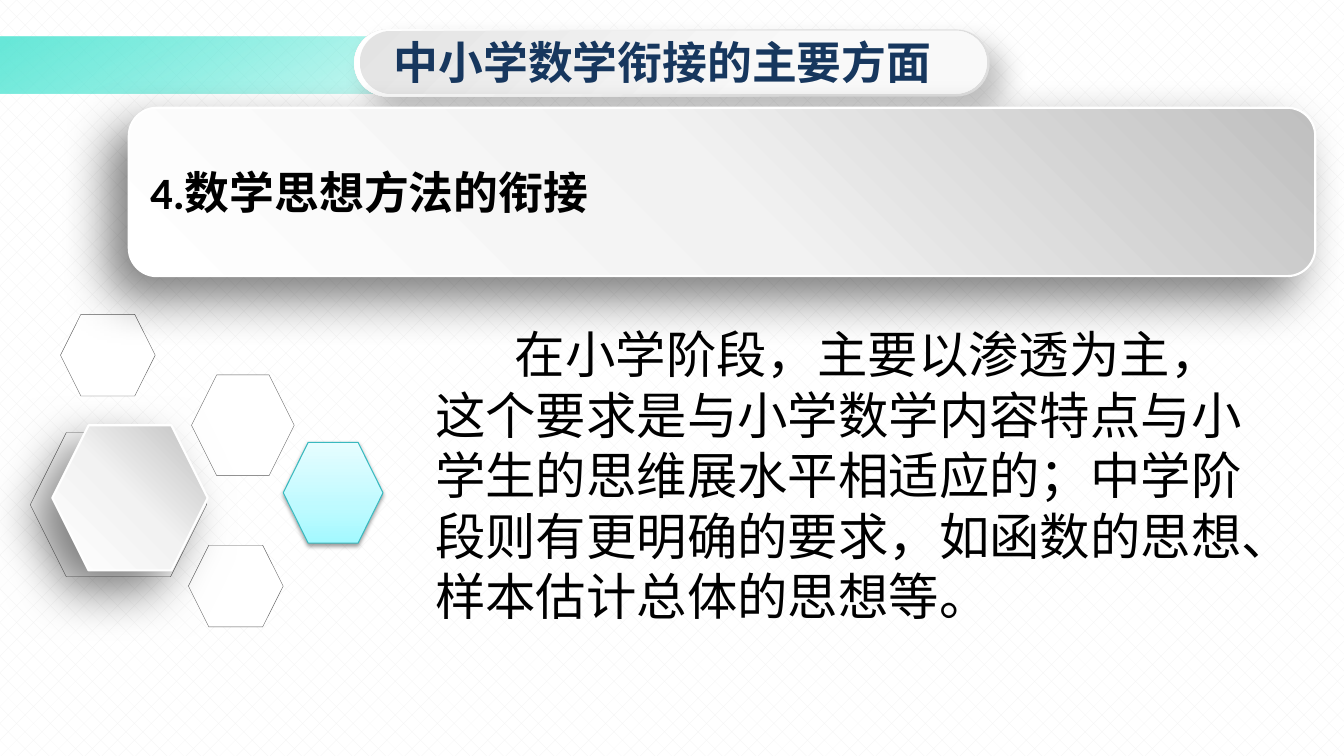
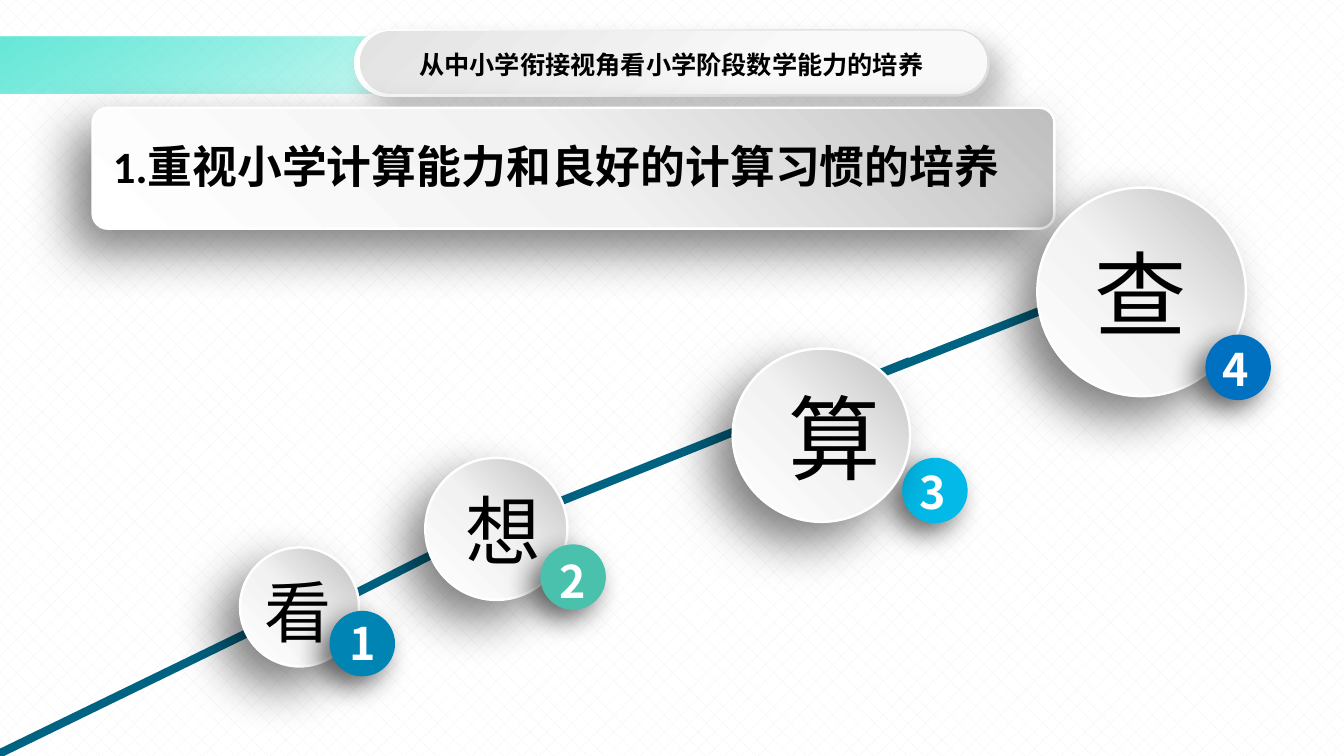
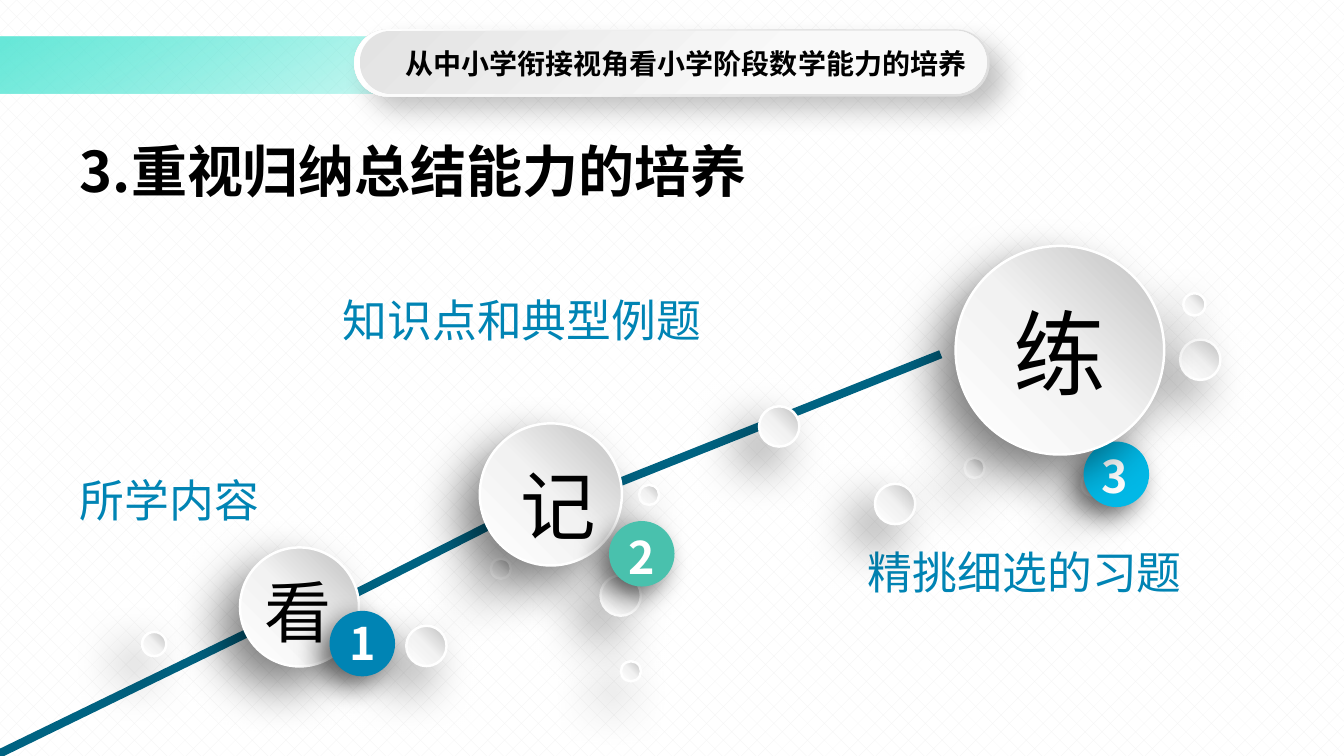
import pptx
import pptx.dml.color
import pptx.enum.dml
import pptx.enum.shapes
import pptx.enum.text
import pptx.oxml.ns
import pptx.util
from lxml import etree

Pt = pptx.util.Pt
RGB = pptx.dml.color.RGBColor
SHAPE = pptx.enum.shapes.MSO_SHAPE
ALIGN = pptx.enum.text.PP_ALIGN
ANCHOR = pptx.enum.text.MSO_ANCHOR
qn = pptx.oxml.ns.qn

WHITE = RGB(0xFF, 0xFF, 0xFF)
BLACK = RGB(0, 0, 0)
PALE = RGB(0xF2, 0xF2, 0xF2)
SILVER = RGB(0xBF, 0xBF, 0xBF)
GREY = RGB(0x59, 0x59, 0x59)
NAVY = RGB(0x17, 0x37, 0x5E)
PETROL = RGB(0x00, 0x63, 0x82)
BLUE = RGB(0x00, 0x84, 0xB4)
GREEN = RGB(0x49, 0xC1, 0xAD)
SKY = RGB(0x02, 0xB9, 0xE7)
ROYAL = RGB(0x00, 0x70, 0xC0)
TEAL_EDGE = RGB(0x39, 0xB9, 0xBF)

LATIN = "Calibri"
CJK = "Noto Sans CJK SC"

# Gradients: clockwise angle, then (position, colour[, opacity]) stops
METAL = (315, [(0, WHITE), (50, PALE), (100, SILVER)])
BAND = (60, [(1, RGB(0x4E, 0xE4, 0xD2), 85), (50, RGB(0x20, 0xE2, 0xCB), 0)])
PILL_RIM = (225, [(1, RGB(0xDE, 0xDE, 0xDE)), (30, RGB(0xE0, 0xE0, 0xE0)),
                  (61, RGB(0xF6, 0xF6, 0xF6)), (100, WHITE)])
PILL_FACE = (45, [(0, RGB(0xE3, 0xE3, 0xE3)), (67, RGB(0xF9, 0xF9, 0xF9))])
AQUA = (270, [(0, RGB(0xA3, 0xF9, 0xFF)), (35, RGB(0xBE, 0xFA, 0xFF)),
              (100, RGB(0xE6, 0xFD, 0xFF))])

# Shadows: opacity, blur, distance, direction
DEEP = (50, 35, 20, 135)
BADGE_SHADOW = (60, 20, 10, 135)
PILL_SHADOW = (24, 19, 14, 45)
AQUA_SHADOW = (38, 3.1, 1.6, 90)


def add_xml(parent, tag, **attributes):
    child = etree.SubElement(parent, qn("a:" + tag))
    for name, value in attributes.items():
        child.set(name, str(value))
    return child


def write(shape, text, size, color=BLACK, font=LATIN, bold=False, align=ALIGN.LEFT,
          anchor=ANCHOR.TOP, insets=(7.2, 3.6), indent=0, spacing=1.0):
    frame = shape.text_frame
    frame.auto_size = pptx.enum.text.MSO_AUTO_SIZE.NONE
    frame.word_wrap = True
    frame.vertical_anchor = anchor
    frame.margin_left = frame.margin_right = Pt(insets[0])
    frame.margin_top = frame.margin_bottom = Pt(insets[1])
    paragraph = frame.paragraphs[0]
    paragraph.alignment = align
    paragraph.line_spacing = spacing
    if indent:
        paragraph._p.get_or_add_pPr().set("indent", str(int(Pt(indent))))
    run = paragraph.add_run()
    run.text = text
    run.font.size = Pt(size)
    run.font.bold = bold
    run.font.color.rgb = color
    run.font.name = font
    add_xml(run._r.get_or_add_rPr(), "ea", typeface=CJK)


class Deck:
    def __init__(self):
        self.prs = pptx.Presentation()
        self.prs.slide_width, self.prs.slide_height = Pt(960), Pt(540)
        backdrop = self.prs.slide_master.background.fill
        backdrop.patterned()
        backdrop.pattern = pptx.enum.dml.MSO_PATTERN.DOTTED_DIAMOND
        backdrop.fore_color.rgb = PALE
        backdrop.back_color.rgb = WHITE
        self.slide = None

    def start(self, text, size, box, **style):
        """New slide with the turquoise band and the title pill."""
        self.slide = self.prs.slides.add_slide(self.prs.slide_layouts[5])
        self.shape(SHAPE.RECTANGLE, (-1, 26, 948, 41), BAND)
        self.shape(SHAPE.ROUNDED_RECTANGLE, (253, 21, 454, 48), PILL_RIM,
                   shadow=PILL_SHADOW, corner=0.5)
        self.shape(SHAPE.ROUNDED_RECTANGLE, (257, 22, 448, 45), PILL_FACE, corner=0.5)
        title = self.slide.shapes.title
        title.left, title.top, title.width, title.height = map(Pt, box)
        write(title, text, size, bold=True, **style)
        title._element.getparent().append(title._element)  # above the pill

    def shape(self, kind, box, fill, line=None, shadow=None, corner=None):
        shape = self.slide.shapes.add_shape(kind, *map(Pt, box))
        if corner is not None:
            shape.adjustments[0] = corner
        if isinstance(fill, RGB):
            shape.fill.solid()
            shape.fill.fore_color.rgb = fill
        else:
            self.gradient(shape, *fill)
        if line:
            shape.line.color.rgb, shape.line.width = line[0], Pt(line[1])
        else:
            shape.line.fill.background()
        shape.shadow.inherit = False
        if shadow:
            opacity, blur, distance, direction = shadow
            effects = shape._element.spPr.find(qn("a:effectLst"))
            outer = add_xml(effects, "outerShdw", blurRad=int(Pt(blur)), dist=int(Pt(distance)),
                            dir=direction * 60000, algn="ctr", rotWithShape=0)
            black = add_xml(outer, "srgbClr", val=BLACK)
            add_xml(black, "alpha", val=opacity * 1000)
        return shape

    def gradient(self, shape, angle, stops):
        shape.fill.gradient()
        grad = shape._element.spPr.find(qn("a:gradFill"))
        for child in list(grad):
            grad.remove(child)
        stop_list = add_xml(grad, "gsLst")
        for position, color, *opacity in stops:
            stop = add_xml(stop_list, "gs", pos=position * 1000)
            tint = add_xml(stop, "srgbClr", val=color)
            if opacity:
                add_xml(tint, "alpha", val=opacity[0] * 1000)
        add_xml(grad, "lin", ang=angle * 60000, scaled=0)

    def metal(self, kind, box, width=1.75, corner=None):
        return self.shape(kind, box, METAL, (WHITE, width), DEEP, corner)

    def text(self, box, text, size, **style):
        write(self.slide.shapes.add_textbox(*map(Pt, box)), text, size, **style)

    def path_line(self, x1, y1, x2, y2):
        line = self.slide.shapes.add_connector(
            pptx.enum.shapes.MSO_CONNECTOR.STRAIGHT, *map(Pt, (x1, y1, x2, y2)))
        line.line.color.rgb, line.line.width = PETROL, Pt(6)
        add_xml(line._element.spPr, "effectLst")

    def disc(self, box, word, size, dx, dy):
        self.metal(SHAPE.OVAL, box)
        self.text((box[0] + dx, box[1] + dy, size + 14.4, size * 1.35), word, size, font=CJK)

    def badge(self, x, y, number, color, dx=0, dy=5):
        side = 46.8
        self.shape(SHAPE.OVAL, (x, y, side, side), color, shadow=BADGE_SHADOW)
        self.text((x + dx, y + dy, side, 39), number, 32, color=WHITE, font=CJK,
                  bold=True, align=ALIGN.CENTER, insets=(0, 0))

    def first_step(self):
        """Opening of the rising path, shared by both path slides."""
        self.disc((171.4, 391, 85, 85), "看", 48, 10.5, 13)
        self.badge(235.4, 436.3, "1", BLUE, dy=3.6)


PATH_START = [(216, 443, 378, 361), (-4, 540, 212, 435)]
ABILITY_TITLE = "从中小学衔接视角看小学阶段数学能力的培养"


def methods_slide(deck):
    deck.start("中小学数学衔接的主要方面", 32, (274, 21, 411, 46), color=NAVY, font=CJK)
    # Hexagon cluster
    outline = (GREY, 0.25)
    for box in [(136.8, 267.8, 73.4, 72), (21.6, 309, 126, 103),
                (43.2, 224.6, 67.7, 58.3), (134.6, 389.5, 67.7, 58.3)]:
        deck.shape(SHAPE.HEXAGON, box, WHITE, outline)
    deck.metal(SHAPE.HEXAGON, (37.4, 303.8, 111, 103.7), 1.5)
    deck.shape(SHAPE.HEXAGON, (202.3, 316, 71.3, 72), AQUA, (TEAL_EDGE, 0.75), AQUA_SHADOW)
    # Heading card and body
    heading = deck.metal(SHAPE.ROUNDED_RECTANGLE, (92, 77, 847.5, 120.3), 1.5)
    write(heading, "4.数学思想方法的衔接", 32, bold=True, anchor=ANCHOR.MIDDLE, insets=(9.4, 5))
    deck.text((303.8, 227.5, 595.4, 225.4),
              "在小学阶段，主要以渗透为主，这个要求是与小学数学内容特点与小学生的思维展水平相适应的；"
              "中学阶段则有更明确的要求，如函数的思想、样本估计总体的思想等。", 36, indent=57)


def calculation_slide(deck):
    deck.start(ABILITY_TITLE, 18, (274, 31.7, 411, 29), align=ALIGN.CENTER)
    # Heading card
    deck.metal(SHAPE.ROUNDED_RECTANGLE, (66.2, 77, 687, 86.4), corner=0.125)
    deck.text((71.3, 94.3, 678.2, 48.2), "1.重视小学计算能力和良好的计算习惯的培养", 32,
              bold=True, insets=(9.4, 5))
    # Rising path with four steps
    for ends in PATH_START + [(393, 361, 650, 258), (616, 272, 873, 171)]:
        deck.path_line(*ends)
    deck.first_step()
    deck.disc((303.8, 327, 101.5, 101.5), "想", 54, 21.6, 15)
    deck.badge(386, 388.8, "2", GREEN, dy=6.5)
    deck.badge(644.4, 327, "3", SKY, dx=-1.4)
    deck.disc((741, 134, 149, 149), "查", 66, 34, 32)
    deck.badge(861, 239, "4", ROYAL, dx=-1.4)
    deck.disc((523.4, 249, 126.7, 123.8), "算", 66, 33, 20)


def summary_slide(deck):
    deck.start(ABILITY_TITLE, 20, (274, 29.5, 432, 31.7), align=ALIGN.CENTER)
    for ends in PATH_START + [(416, 355, 672, 253)]:
        deck.path_line(*ends)
    # Captions
    for box, caption in [((235.4, 196.6, 314, 56), "知识点和典型例题"),
                         ((47.5, 324.7, 206, 56), "所学内容"),
                         ((610.6, 376.6, 297, 56), "精挑细选的习题")]:
        deck.text(box, caption, 32, color=BLUE, insets=(9.4, 5), spacing=1.2)
    # Scattered beads: left, top, diameter
    for x, y, size in [(456.5, 346.3, 14.4), (429, 411, 28.8), (443.5, 472.3, 14.4),
                       (290.2, 447, 28.8), (350.6, 399, 14.4), (625, 345.6, 28.8),
                       (772.6, 337, 17.3), (689, 327, 14.4), (542.2, 290.2, 28.8),
                       (843, 242.6, 28.8), (845.3, 209.5, 15.8), (101.5, 451.4, 17.3)]:
        deck.metal(SHAPE.OVAL, (x, y, size, size))
    # Three steps
    deck.first_step()
    deck.disc((342.7, 302.4, 101.5, 101.5), "记", 54, 22.3, 22)
    deck.badge(435, 372.2, "2", GREEN, dy=6.5)
    deck.badge(774, 315.4, "3", SKY, dx=-1.4)
    deck.disc((682.6, 175.7, 149, 149), "练", 66, 34, 32)
    # Section heading
    deck.text((15, 94.3, 671, 55.4), "3.重视归纳总结能力的培养", 40, font=CJK, bold=True,
              align=ALIGN.JUSTIFY, indent=35)


def main():
    deck = Deck()
    methods_slide(deck)
    calculation_slide(deck)
    summary_slide(deck)
    deck.prs.save("out.pptx")


if __name__ == "__main__":
    main()
